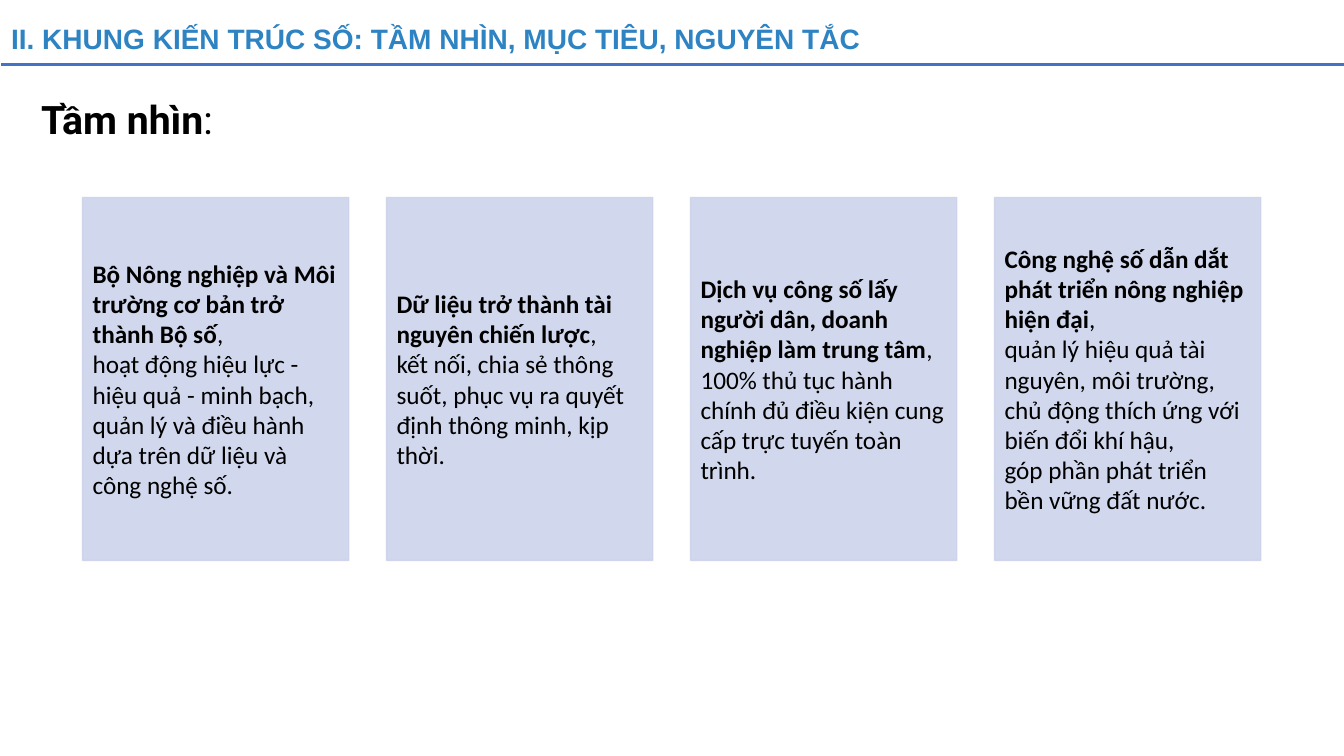
from lxml import etree
from pptx import Presentation
from pptx import util as u
from pptx.dml.color import RGBColor
from pptx.enum import shapes, text
from pptx.oxml import ns


def color(value):
    return RGBColor.from_string(value)


def write(paragraph, content, size, font, value, bold):
    """Add runs in one format, with a line break at each newline."""
    for number, line in enumerate(content.split("\n")):
        if number:
            paragraph.add_line_break()
        run = paragraph.add_run()
        run.text = line
        formats = {"size": u.Pt(size), "name": font, "bold": bold}
        for name, setting in formats.items():
            setattr(run.font, name, setting)
        run.font.color.rgb = color(value)


presentation = Presentation()
presentation.slide_width = u.Inches(13.33)
presentation.slide_height = u.Inches(7.5)
slide = presentation.slides.add_slide(presentation.slide_layouts[5])

# Title
title = slide.shapes.title
title_place = {"left": 0.01, "top": 0.2, "width": 13.31, "height": 0.4}
for name, length in title_place.items():
    setattr(title, name, u.Inches(length))
title_format = {"word_wrap": True, "auto_size": text.MSO_AUTO_SIZE.NONE,
                "vertical_anchor": text.MSO_ANCHOR.MIDDLE}
for name, setting in title_format.items():
    setattr(title.text_frame, name, setting)
paragraph = title.text_frame.paragraphs[0]
paragraph.alignment = text.PP_ALIGN.LEFT
paragraph.line_spacing = 0.9
write(paragraph, "II. KHUNG KIẾN TRÚC SỐ: TẦM NHÌN, MỤC TIÊU, NGUYÊN TẮC",
      20, "Arial", "2E83C3", True)

# Rule under the title
rule = slide.shapes.add_connector(
    shapes.MSO_CONNECTOR.STRAIGHT,
    u.Inches(0.01), u.Inches(0.64), u.Inches(13.33), u.Inches(0.64))
rule.line.color.rgb = color("4472C4")
rule.line.width = u.Pt(1.5)
etree.SubElement(rule._element.spPr, ns.qn("a:effectLst"))

# Section heading
heading = slide.shapes.add_textbox(
    u.Inches(0.31), u.Inches(0.9), u.Inches(11.47), u.Inches(0.57))
heading.text_frame.word_wrap = True
paragraph = heading.text_frame.paragraphs[0]
write(paragraph, "Tầm nhìn", 28, "Roboto", "000000", True)
write(paragraph, ":", 28, "Roboto", "000000", False)

# Vision cards: bold lead, then detail
cards = [
    ("Bộ Nông nghiệp và Môi trường cơ bản trở thành Bộ số",
     ",\nhoạt động hiệu lực - hiệu quả - minh bạch, quản lý và điều hành "
     "dựa trên dữ liệu và công nghệ số."),
    ("Dữ liệu trở thành tài nguyên chiến lược",
     ",\nkết nối, chia sẻ thông suốt, phục vụ ra quyết định thông minh, "
     "kịp thời."),
    ("Dịch vụ công số lấy người dân, doanh nghiệp làm trung tâm",
     ",\n100% thủ tục hành chính đủ điều kiện cung cấp trực tuyến "
     "toàn trình."),
    ("Công nghệ số dẫn dắt phát triển nông nghiệp hiện đại",
     ",\nquản lý hiệu quả tài nguyên, môi trường, chủ động thích ứng với "
     "biến đổi khí hậu,\ngóp phần phát triển bền vững đất nước."),
]
card_left, card_pitch = 0.82, 3.015
card_format = {"word_wrap": True, "vertical_anchor": text.MSO_ANCHOR.MIDDLE}
for side in ("left", "right", "top", "bottom"):
    card_format["margin_" + side] = u.Inches(0.1)

for column, (lead, detail) in enumerate(cards):
    card = slide.shapes.add_shape(
        shapes.MSO_SHAPE.RECTANGLE, u.Inches(card_left + column * card_pitch),
        u.Inches(1.96), u.Inches(2.64), u.Inches(3.6))
    card.shadow.inherit = False
    card.fill.solid()
    card.fill.fore_color.rgb = color("CCD3EA")
    card.line.color.rgb = color("CCD3EA")
    card.line.width = u.Pt(1)
    for tint in card._element.spPr.iter(ns.qn("a:srgbClr")):
        etree.SubElement(tint, ns.qn("a:alpha"), val="89000")
    for name, setting in card_format.items():
        setattr(card.text_frame, name, setting)
    paragraph = card.text_frame.paragraphs[0]
    paragraph.alignment = text.PP_ALIGN.LEFT
    write(paragraph, lead, 18, "Calibri", "000000", True)
    write(paragraph, detail, 18, "Calibri", "000000", False)

presentation.save("out.pptx")
